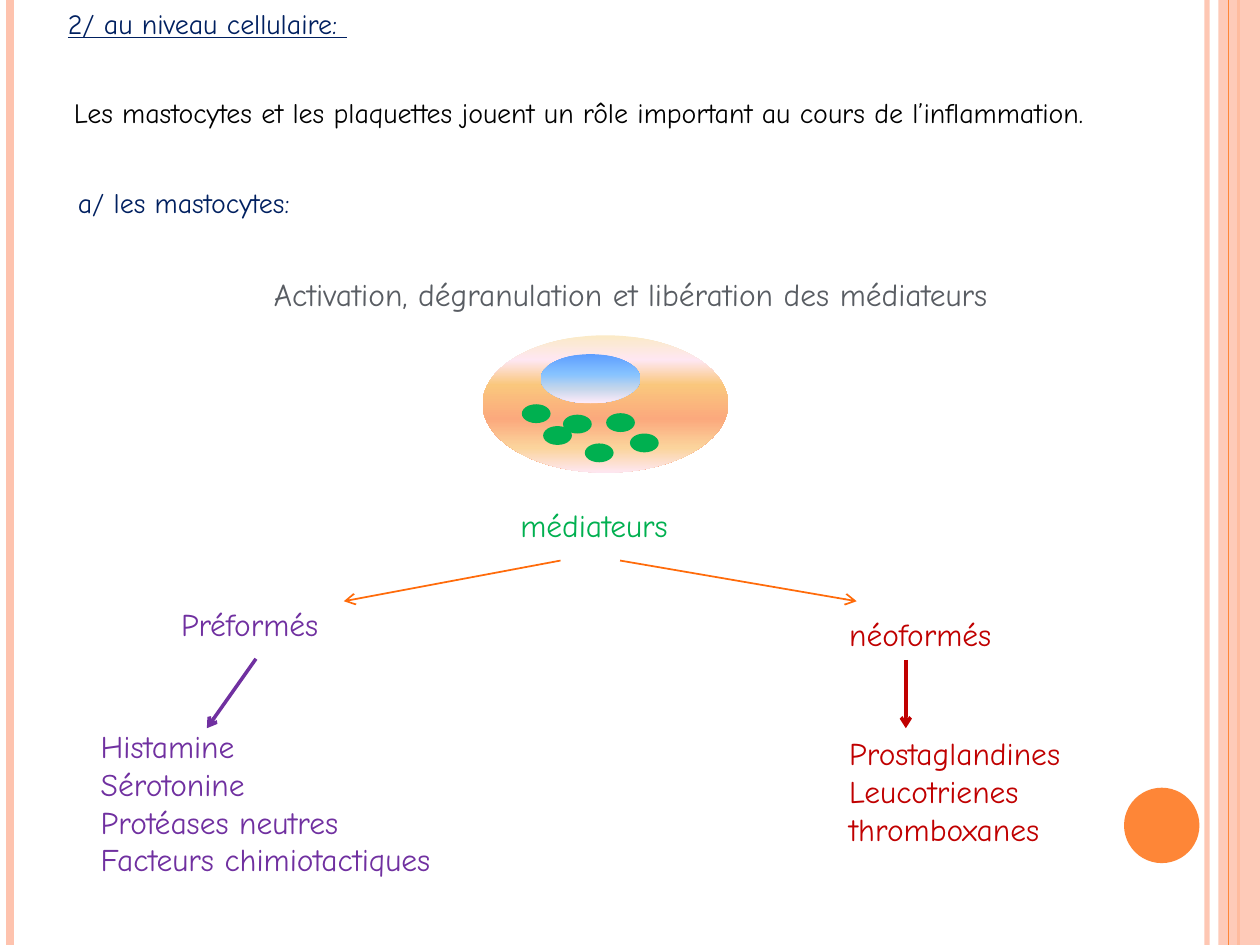
"""Build the slide on mast cells and their mediators."""
from copy import deepcopy

from lxml.etree import SubElement
from pptx import Presentation
from pptx.dml.color import RGBColor
from pptx.enum.shapes import MSO_CONNECTOR as Connector, MSO_SHAPE as Shape
from pptx.oxml.ns import qn
from pptx.util import Cm, Pt

PEACH, ORANGE, ARROW = "FEC3AE", "FE8637", "FF6B0A"
NAVY, BLACK, GREY = "002060", "000000", "595D63"
GREEN, PURPLE, RED = "00B050", "7030A0", "C00000"
WIDTH, HEIGHT = 25.4, 19.05


def rgb(code):
    return RGBColor.from_string(code)


class Board:
    """Holds the style and the current slide, and draws each kind of element."""

    font = "Comic Neue"

    def __init__(self, slide):
        self.slide = slide

    def fade(self, element, percent):
        color = next(element.iter(qn("a:srgbClr")))
        SubElement(color, qn("a:alpha"), val=str(percent * 1000))

    def line(self, x1, y1, x2, y2, color, width, opacity=100, arrow=False):
        stroke = self.slide.shapes.add_connector(
            Connector.STRAIGHT, Cm(x1), Cm(y1), Cm(x2), Cm(y2))
        stroke.line.color.rgb = rgb(color)
        stroke.line.width = Pt(width)
        properties = stroke._element.spPr
        if opacity < 100:
            self.fade(properties, opacity)
        if arrow:
            SubElement(properties.find(qn("a:ln")), qn("a:tailEnd"), type="arrow")
        SubElement(properties, qn("a:effectLst"))

    def shape(self, kind, left, top, width, height, color=None, opacity=100):
        form = self.slide.shapes.add_shape(
            kind, Cm(left), Cm(top), Cm(width), Cm(height))
        form.shadow.inherit = False
        form.line.fill.background()
        if color:
            form.fill.solid()
            form.fill.fore_color.rgb = rgb(color)
        if opacity < 100:
            self.fade(form._element.spPr, opacity)
        return form

    def gradient_oval(self, left, top, width, height, stops):
        oval = self.shape(Shape.OVAL, left, top, width, height)
        oval.fill.gradient()
        oval.fill.gradient_angle = 270
        stop_list = next(oval._element.iter(qn("a:gsLst")))
        for _ in stops[2:]:
            stop_list.append(deepcopy(stop_list[0]))
        for stop, (position, color) in zip(oval.fill.gradient_stops, stops):
            stop.position = position / 100
            stop.color.rgb = rgb(color)

    def text(self, left, top, width, height, lines, wrap=False):
        frame = self.slide.shapes.add_textbox(
            Cm(left), Cm(top), Cm(width), Cm(height)).text_frame
        frame.word_wrap = wrap
        for number, (wording, color, size, indent, gap, underline) in enumerate(lines):
            paragraph = frame.add_paragraph() if number else frame.paragraphs[0]
            if indent:
                paragraph._p.get_or_add_pPr().set("marL", str(Cm(indent)))
            if number and gap:
                paragraph.space_before = Pt(gap)
            run = paragraph.add_run()
            run.text = wording
            run.font.name = self.font
            run.font.size = Pt(size)
            run.font.color.rgb = rgb(color)
            if underline:
                run.font.underline = True

    def label(self, left, top, width, height, color, *wordings):
        self.text(left, top, width, height,
                  [(wording, color, 18, 0, 0, False) for wording in wordings])


def main():
    deck = Presentation()
    deck.slide_width, deck.slide_height = Cm(WIDTH), Cm(HEIGHT)
    board = Board(deck.slides.add_slide(deck.slide_layouts[6]))

    board.line(24.33, 0, 24.33, HEIGHT, PEACH, 3, opacity=93)
    board.line(0.2, 0, 0.2, HEIGHT, PEACH, 4.5)
    board.line(24.97, 0, 24.97, HEIGHT, ORANGE, 1.5)
    board.shape(Shape.RECTANGLE, 24.56, 0, 0.84, HEIGHT, PEACH, opacity=87)
    board.line(24.77, 0, 24.77, HEIGHT, ORANGE, 0.75)
    board.shape(Shape.OVAL, 22.66, 15.88, 1.52, 1.52, ORANGE)

    board.text(0, 0, 24, 6.5, [
        ("2/ au niveau cellulaire: ", NAVY, 16, 1.12, 0, True),
        ("Les mastocytes et les plaquettes jouent un rôle important "
         "au cours de l’inflammation.", BLACK, 16, 1.24, 32, False),
        ("a/ les mastocytes:", NAVY, 16, 1.32, 32, False),
        ("Activation, dégranulation et libération des médiateurs",
         GREY, 18, 5.27, 32, False),
    ], wrap=True)

    board.label(10.24, 10.08, 3.86, 1.02, GREEN, "médiateurs")
    board.label(3.4, 12.07, 4.37, 1.02, PURPLE, "Préformés")
    board.label(16.87, 12.27, 5.16, 1.02, RED, "néoformés")
    board.label(1.78, 14.53, 8.41, 3.33, PURPLE, "Histamine", "Sérotonine",
                "Protéases neutres", "Facteurs chimiotactiques")
    board.label(16.87, 14.68, 5.16, 2.57, RED,
                "Prostaglandines", "Leucotrienes", "thromboxanes")

    board.gradient_oval(9.73, 6.76, 4.95, 2.77, [
        (0, "FBEAC7"), (18, "FEE7F2"), (36, "FAC77D"),
        (61, "FBA97D"), (82, "FBD49C"), (100, "FEE7F2")])
    board.gradient_oval(10.9, 7.14, 2.01, 0.99, [
        (0, "5E9EFF"), (40, "85C2FF"), (70, "C4D6EB"), (100, "FFEBFA")])
    granules = [(10.52, 8.15), (10.95, 8.59), (11.35, 8.36),
                (11.79, 8.94), (12.22, 8.33), (12.7, 8.74)]
    for left, top in granules:
        board.shape(Shape.OVAL, left, top, 0.58, 0.38, GREEN)

    board.line(12.5, 11.3, 17.27, 12.12, ARROW, 1, arrow=True)
    board.line(11.3, 11.3, 6.93, 12.12, ARROW, 1, arrow=True)
    board.line(5.16, 13.28, 4.17, 14.68, PURPLE, 2, arrow=True)
    board.line(18.26, 13.3, 18.26, 14.68, RED, 2, arrow=True)

    deck.save("out.pptx")


if __name__ == "__main__":
    main()
